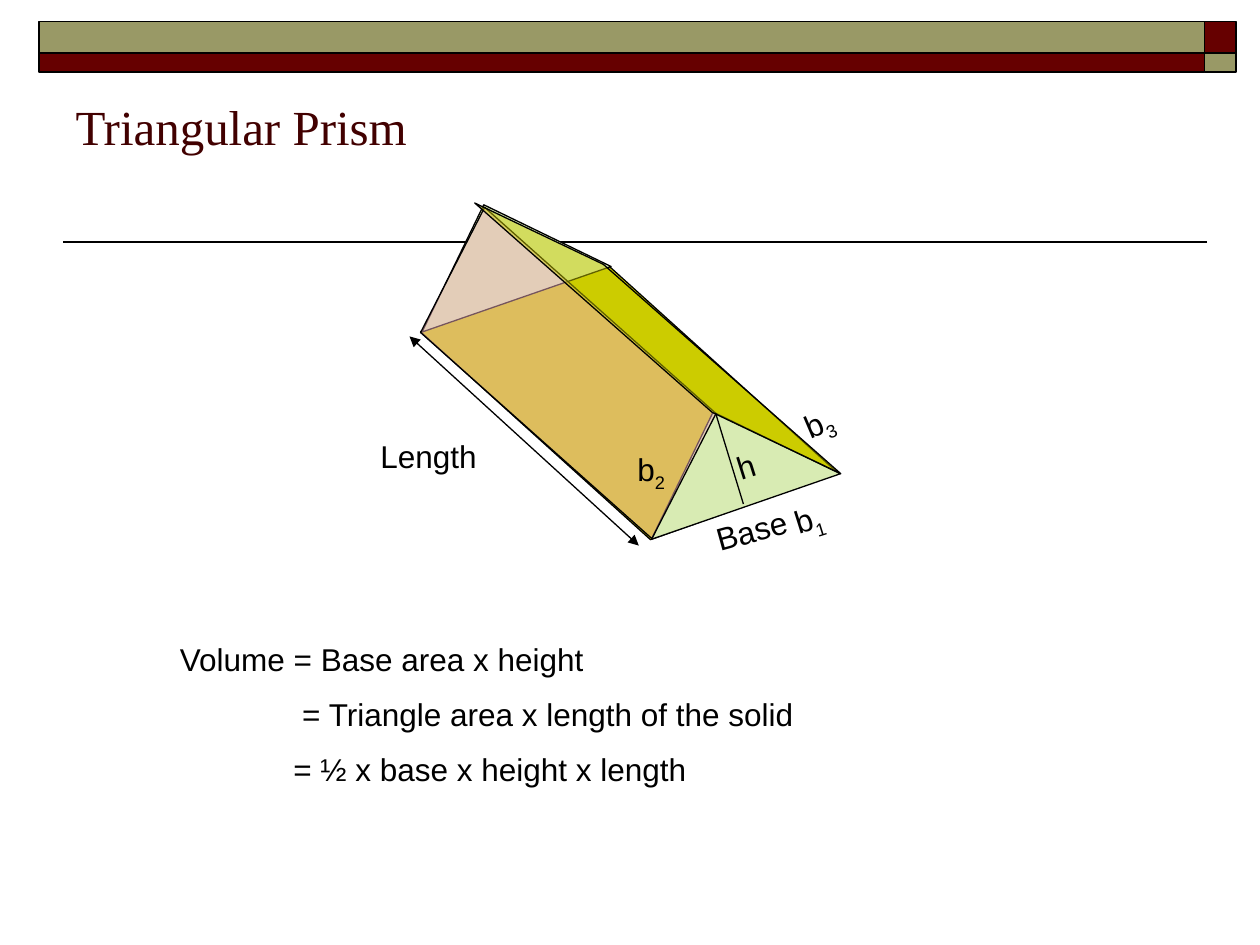
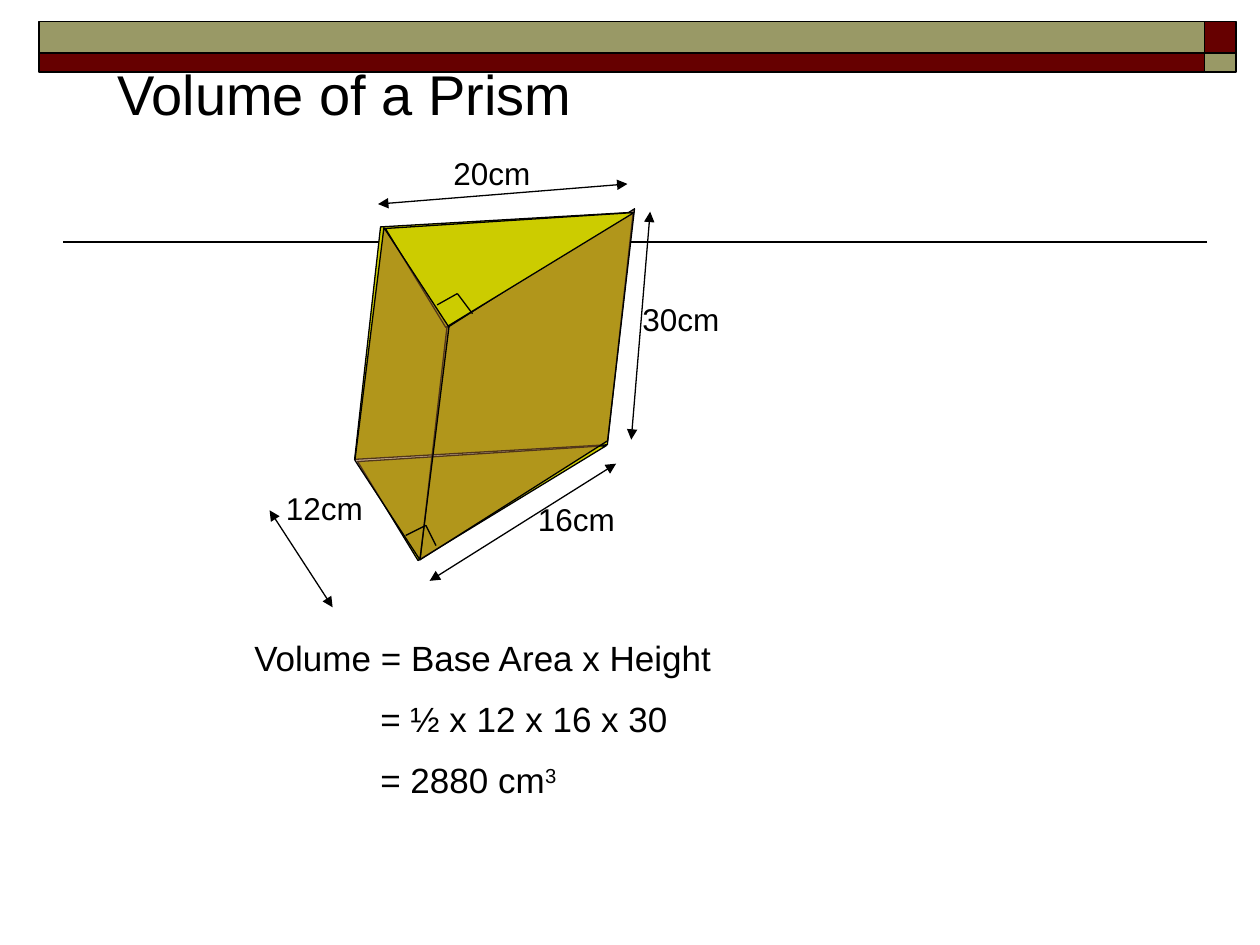
"""Build two slides on the volume of triangular prisms."""
import dataclasses
import itertools

import lxml.etree
import pptx
import pptx.dml.color
import pptx.enum.shapes
import pptx.enum.text
import pptx.oxml.ns
import pptx.util

SHAPES = pptx.enum.shapes.MSO_SHAPE
ANCHOR = pptx.enum.text.MSO_ANCHOR


@dataclasses.dataclass(frozen=True)
class Theme:
    """Colours, type styles, line widths and grid of the presentation."""
    ink: str = "000000"
    maroon: str = "660000"
    olive: str = "999966"
    yellow: str = "CCCC00"
    green: str = "D8EBB3"
    pink: str = "F0AEBE"
    brown: str = "996633"
    thin: float = 0.75
    frame: float = 1
    serif_title: tuple = ("Times New Roman", 28, "420000")
    sans_title: tuple = ("Arial", 32, "000000")
    formula: tuple = ("Arial", 20, "000000")
    label: tuple = ("Arial", 18, "000000")
    paragraph_gap: float = 0.55
    columns: int = 100
    rows: int = 75


def set_attributes(target, values):
    """Set every attribute named in a dict."""
    for name, value in values.items():
        setattr(target, name, value)


def rgb(colour):
    """Turn a hex string into a colour."""
    return pptx.dml.color.RGBColor.from_string(colour)


def add_child(parent, tag, **attributes):
    """Append a DrawingML element to a parent."""
    return lxml.etree.SubElement(parent, pptx.oxml.ns.qn(tag), attributes)


class SlideBuilder:
    """Hold the theme and the current slide, and draw on it in grid units."""

    def __init__(self, presentation, theme):
        """Work out the grid from the slide size."""
        self.presentation = presentation
        self.theme = theme
        self.column = presentation.slide_width / theme.columns
        self.row = presentation.slide_height / theme.rows
        self.slide = None

    def point(self, x, y):
        """Convert a grid position or size to slide lengths."""
        return round(x * self.column), round(y * self.row)

    def box(self, left, top, width, height):
        """Convert a grid box to slide lengths."""
        return self.point(left, top) + self.point(width, height)

    def start_slide(self, title, style, box, anchor):
        """Add a title-only slide with the shared rule, bands and title."""
        self.slide = self.presentation.slides.add_slide(self.presentation.slide_layouts[5])
        self.line((95.8, 19.2), (5, 19.2), width=self.theme.frame)
        bands = itertools.product([(3.1, 92.5), (95.6, 2.5)], [(1.7, 2.5), (4.2, 1.5)])
        colours = (self.theme.olive, self.theme.maroon, self.theme.maroon, self.theme.olive)
        for ((left, width), (top, height)), colour in zip(bands, colours):
            self.preset(SHAPES.RECTANGLE, (left, top, width, height), colour,
                        width=self.theme.frame)
        placeholder = self.slide.shapes.title
        names = ("left", "top", "width", "height")
        set_attributes(placeholder, dict(zip(names, self.box(*box))))
        self.set_text(placeholder, [(0, title)], style, anchor)

    def outline(self, line, width):
        """Format a line in ink."""
        line.color.rgb = rgb(self.theme.ink)
        line.width = pptx.util.Pt(width)

    def paint(self, shape, colour, opacity=100, width=None):
        """Fill and outline a shape without a shadow."""
        shape.shadow.inherit = False
        shape.fill.solid()
        shape.fill.fore_color.rgb = rgb(colour)
        self.outline(shape.line, width or self.theme.thin)
        if opacity < 100:
            colour_node = shape._element.spPr.find(".//" + pptx.oxml.ns.qn("a:srgbClr"))
            add_child(colour_node, "a:alpha", val=str(opacity * 1000))

    def preset(self, kind, box, colour, rotation=0, skew=None, flipped=False, **paint):
        """Add a preset shape, turned, skewed or flipped as asked."""
        shape = self.slide.shapes.add_shape(kind, *self.box(*box))
        shape.rotation = rotation
        if skew is not None:
            shape.adjustments[0] = skew
        if flipped:
            shape._element.spPr.xfrm.set("flipV", "1")
        self.paint(shape, colour, **paint)

    def polygon(self, points, colour):
        """Add a closed outline through grid points."""
        start, *others = [self.point(*corner) for corner in points]
        builder = self.slide.shapes.build_freeform(*start)
        builder.add_line_segments(others, close=True)
        self.paint(builder.convert_to_shape(), colour)

    def line(self, start, end, arrows=False, width=None):
        """Add a straight line, with arrowheads at both ends if asked."""
        connector = self.slide.shapes.add_connector(
            pptx.enum.shapes.MSO_CONNECTOR.STRAIGHT, *self.point(*start), *self.point(*end))
        self.outline(connector.line, width or self.theme.thin)
        if arrows:
            outline_node = connector._element.spPr.find(pptx.oxml.ns.qn("a:ln"))
            for tag in ("a:headEnd", "a:tailEnd"):
                add_child(outline_node, tag, type="triangle")
        add_child(connector._element.spPr, "a:effectLst")

    def set_text(self, shape, lines, style, anchor=ANCHOR.TOP):
        """Set lines given as indent, text and optional script and baseline."""
        name, size, colour = style
        frame = shape.text_frame
        set_attributes(frame, {"word_wrap": True, "vertical_anchor": anchor,
                               "auto_size": pptx.enum.text.MSO_AUTO_SIZE.NONE})
        for index, (indent, text, *script) in enumerate(lines):
            paragraph = frame.add_paragraph() if index else frame.paragraphs[0]
            gap = size * self.theme.paragraph_gap if index else 0
            set_attributes(paragraph, {"alignment": pptx.enum.text.PP_ALIGN.LEFT,
                                       "space_before": pptx.util.Pt(gap)})
            properties = paragraph._p.get_or_add_pPr()
            properties.set("marL", str(round(indent * self.column)))
            properties.set("indent", "0")
            for content, baseline in [(text, None), *script]:
                run = paragraph.add_run()
                run.text = content
                set_attributes(run.font, {"name": name, "size": pptx.util.Pt(size)})
                run.font.color.rgb = rgb(colour)
                if baseline:
                    run._r.get_or_add_rPr().set("baseline", str(baseline * 1000))

    def text(self, box, lines, style=None, rotation=0):
        """Add a text box."""
        shape = self.slide.shapes.add_textbox(*self.box(*box))
        shape.rotation = rotation
        self.set_text(shape, lines, style or self.theme.label)

    def label(self, left, top, width, text, rotation=0):
        """Add a one-line label."""
        self.text((left, top, width, 4), [(0, text)], rotation=rotation)

    def side_label(self, left, top, number, rotation=0):
        """Add the name of a base side with its number as a subscript."""
        self.text((left, top, 7.5, 4), [(2.1, "b", (number, -25))], rotation=rotation)


def build_triangular_prism(builder):
    """Draw the lying prism and its volume formula."""
    theme = builder.theme
    builder.start_slide("Triangular Prism", theme.serif_title, (5, 5.8, 90, 7), ANCHOR.BOTTOM)
    builder.preset(SHAPES.PARALLELOGRAM, (33.9, 25, 32.1, 13.9), theme.yellow, 42.1, 0.54)
    front = [(56.6, 32.7), (51.7, 42.8), (66.7, 37.6)]
    back = [(x - 18.2, y - 16.45) for x, y in front]
    for triangle in (front, back):
        builder.polygon(triangle, theme.green)
    builder.preset(SHAPES.PARALLELOGRAM, (31.4, 24.2, 27.4, 10.8), theme.pink, 221.7, 0.26,
                   flipped=True, opacity=49)
    builder.preset(SHAPES.PARALLELOGRAM, (34.2, 25.3, 36, 3.1), theme.yellow, 221.4, 3.51,
                   opacity=47)
    builder.line((56.8, 32.8), (59, 40))
    builder.text((13.3, 50.3, 70.8, 13), [
        (0, "Volume = Base area x height"),
        (9.7, "= Triangle area x length of the solid"),
        (9, "= ½ x base x height x length")])
    builder.line((32.5, 26.7), (50.7, 43.3), arrows=True)
    builder.label(29.2, 34.2, 10.8, "Length")
    builder.label(55.8, 40, 8.3, "Base", 344.5)
    builder.label(57.5, 35, 3.3, "h", 342.4)
    builder.side_label(47.5, 35.2, "2")
    builder.side_label(60, 39.3, "1", 342.5)
    builder.side_label(60.8, 31.7, "3", 336.9)


def build_volume_example(builder):
    """Draw the standing prism with its measures and worked volume."""
    theme = builder.theme
    builder.start_slide("Volume of a Prism", theme.sans_title, (8.3, 4.2, 59.2, 6.3), ANCHOR.TOP)
    builder.preset(SHAPES.PARALLELOGRAM, (27.6, 17.5, 23.2, 18.3), theme.yellow, 176.7, 0.17)
    builder.preset(SHAPES.RIGHT_TRIANGLE, (29.5, 31.4, 17.5, 9.2), theme.yellow, 328.6)
    builder.preset(SHAPES.PARALLELOGRAM, (27.2, 23.3, 29.3, 14.4), theme.brown, 327.6, 0.81,
                   opacity=53)
    builder.preset(SHAPES.RIGHT_TRIANGLE, (31.7, 12.9, 17.5, 9.2), theme.yellow, 328.6)
    builder.preset(SHAPES.PARALLELOGRAM, (19, 28.2, 25.8, 6.1), theme.brown, 97.1, 1.18,
                   opacity=53)
    for start, corner, end in [((34.7, 24.2), (36.3, 23.3), (37.5, 24.9)),
                               ((32.2, 42.5), (33.8, 41.7), (34.6, 43.3))]:
        builder.line(start, corner)
        builder.line(corner, end)
    for start, end, left, top, measure in [
            ((30, 16.2), (49.8, 14.6), 35, 11.7, "20cm"),
            ((50.1, 34.9), (51.6, 16.8), 50, 23.3, "30cm"),
            ((34.1, 46.1), (48.9, 36.8), 41.7, 39.2, "16cm"),
            ((21.4, 40.5), (26.4, 48.2), 21.7, 38.3, "12cm")]:
        builder.line(start, end, arrows=True)
        builder.label(left, top, 8.3, measure)
    builder.text((9.2, 50, 70, 14.3), [
        (10, "Volume = Base Area x Height"),
        (20, "= ½ x 12 x 16 x 30"),
        (20, "= 2880 cm", ("3", 30))], theme.formula)


def main():
    """Build and save the presentation."""
    presentation = pptx.Presentation()
    presentation.slide_width = pptx.util.Inches(10)
    presentation.slide_height = pptx.util.Inches(7.5)
    builder = SlideBuilder(presentation, Theme())
    build_triangular_prism(builder)
    build_volume_example(builder)
    presentation.save("out.pptx")


if __name__ == "__main__":
    main()
